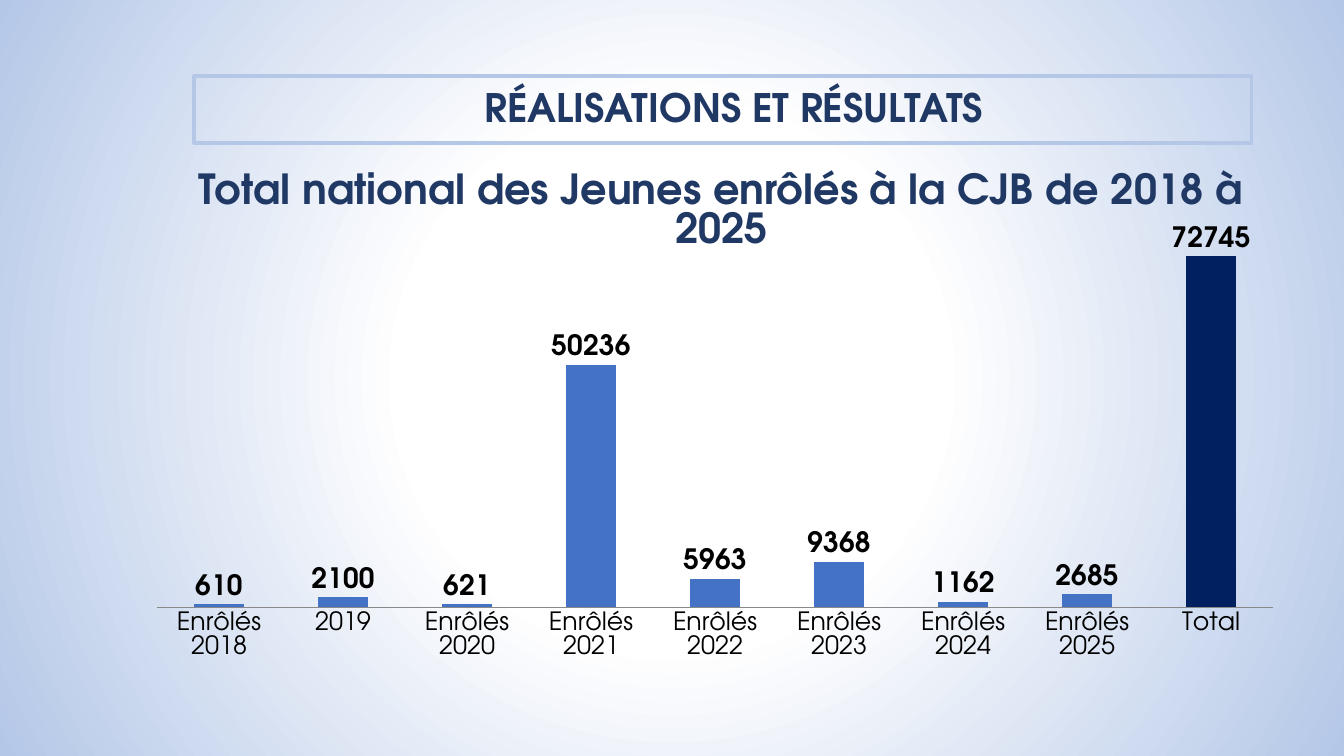
from lxml import etree
from pptx import Presentation
from pptx.chart.data import CategoryChartData
from pptx.dml.color import RGBColor
from pptx.enum.chart import XL_CHART_TYPE as ChartType
from pptx.enum.chart import XL_LABEL_POSITION as LabelPosition
from pptx.enum.chart import XL_TICK_MARK as TickMark
from pptx.enum.text import MSO_ANCHOR as Anchor
from pptx.enum.text import PP_ALIGN as Align
from pptx.oxml import parse_xml
from pptx.oxml.ns import nsdecls, qn
from pptx.util import Pt

TITLE = "RÉALISATIONS ET RÉSULTATS"
SUBTITLE = "Total national des Jeunes enrôlés à la CJB de 2018 à 2025"
ENROLMENTS = [
    ("Enrôlés 2018", 610),
    ("2019", 2100),
    ("Enrôlés 2020", 621),
    ("Enrôlés 2021", 50236),
    ("Enrôlés 2022", 5963),
    ("Enrôlés 2023", 9368),
    ("Enrôlés 2024", 1162),
    ("Enrôlés 2025", 2685),
    ("Total", 72745),
]
FONT = "TeX Gyre Adventor"
NAVY, PALE_BLUE, BLACK = "203864", "B4C7E7", "000000"
BAR_BLUE, TOTAL_BLUE, AXIS_GREY = "4472C4", "002060", "898989"
BACKGROUND_STOPS = [(0, "FFFFFF"), (35, "FFFFFF"), (100, PALE_BLUE)]

# Left, top, width, height in px
TITLE_BOX = (194, 76, 1058, 67)
SUBTITLE_BOX = (142, 165, 1159, 94)
CHART_BOX = (142, 165, 1159, 612)
PLOT = {"x": 0.013, "y": 0.092, "w": 0.963, "h": 0.631}


def px(length):
    return round(length * 914400 / 100.8)


def color(value):
    return RGBColor.from_string(value)


def place(shape, box):
    shape.left, shape.top, shape.width, shape.height = map(px, box)


def style_font(font, size, hex_color, bold=False):
    font.name, font.size, font.bold = FONT, Pt(size), bold
    font.color.rgb = color(hex_color)


def write_heading(shape, text, size, line_spacing):
    frame = shape.text_frame
    frame.text = text
    frame.word_wrap = True
    frame.vertical_anchor = Anchor.MIDDLE
    paragraph = frame.paragraphs[0]
    paragraph.alignment = Align.CENTER
    paragraph.line_spacing = line_spacing
    style_font(paragraph.runs[0].font, size, NAVY, bold=True)


def paint_background(slide):
    """Fill the background with a gradient that radiates from the centre."""
    slide.background.fill.gradient()
    linear = slide.background._cSld.find(".//" + qn("a:gradFill"))
    stops = "".join(
        f'<a:gs pos="{position * 1000}"><a:srgbClr val="{value}"/></a:gs>'
        for position, value in BACKGROUND_STOPS
    )
    radial = parse_xml(
        f'<a:gradFill {nsdecls("a")} rotWithShape="1"><a:gsLst>{stops}</a:gsLst>'
        '<a:path path="circle">'
        '<a:fillToRect l="50000" t="50000" r="50000" b="50000"/>'
        "</a:path></a:gradFill>"
    )
    linear.getparent().replace(linear, radial)


def fix_plot_area(chart):
    """Pin the inner plot area to the fractions in PLOT."""
    plot_area = chart._chartSpace.find(".//" + qn("c:plotArea"))
    for layout in plot_area.findall(qn("c:layout")):
        plot_area.remove(layout)
    layout = etree.Element(qn("c:layout"))
    manual = etree.SubElement(layout, qn("c:manualLayout"))
    settings = {"layoutTarget": "inner", "xMode": "edge", "yMode": "edge", **PLOT}
    for name, value in settings.items():
        etree.SubElement(manual, qn(f"c:{name}")).set("val", str(value))
    plot_area.insert(0, layout)


def add_enrolment_chart(slide):
    data = CategoryChartData()
    data.categories = [label for label, _ in ENROLMENTS]
    data.add_series("Series 1", [count for _, count in ENROLMENTS])
    chart = slide.shapes.add_chart(
        ChartType.COLUMN_CLUSTERED, *map(px, CHART_BOX), data
    ).chart
    chart.has_legend = chart.has_title = False
    style_font(chart.font, 10, BLACK)
    fix_plot_area(chart)

    category_axis = chart.category_axis
    category_axis.major_tick_mark = category_axis.minor_tick_mark = TickMark.NONE
    category_axis.format.line.color.rgb = color(AXIS_GREY)
    style_font(category_axis.tick_labels.font, 18, BLACK)
    value_axis = chart.value_axis
    value_axis.minimum_scale, value_axis.maximum_scale = 0, 80000
    value_axis.has_major_gridlines = False
    value_axis.visible = False

    plot = chart.plots[0]
    plot.gap_width = 150
    plot.vary_by_categories = False
    series = plot.series[0]
    total_bar = series.points[len(ENROLMENTS) - 1]
    for bar, fill_color in ((series, BAR_BLUE), (total_bar, TOTAL_BLUE)):
        bar.format.fill.solid()
        bar.format.fill.fore_color.rgb = color(fill_color)
    labels = series.data_labels
    labels.show_value = True
    labels.position = LabelPosition.OUTSIDE_END
    style_font(labels.font, 20, BLACK, bold=True)


def main():
    presentation = Presentation()
    presentation.slide_width, presentation.slide_height = px(1344), px(756)
    slide = presentation.slides.add_slide(presentation.slide_layouts[5])
    paint_background(slide)

    title = slide.shapes.title
    place(title, TITLE_BOX)
    write_heading(title, TITLE, 28, 0.9)
    title.text_frame.margin_left = px(32)
    title.line.color.rgb = color(PALE_BLUE)
    title.line.width = Pt(2.25)

    subtitle = slide.shapes.add_textbox(*map(px, SUBTITLE_BOX))
    write_heading(subtitle, SUBTITLE, 29.6, 0.8)

    add_enrolment_chart(slide)
    presentation.save("out.pptx")


if __name__ == "__main__":
    main()
